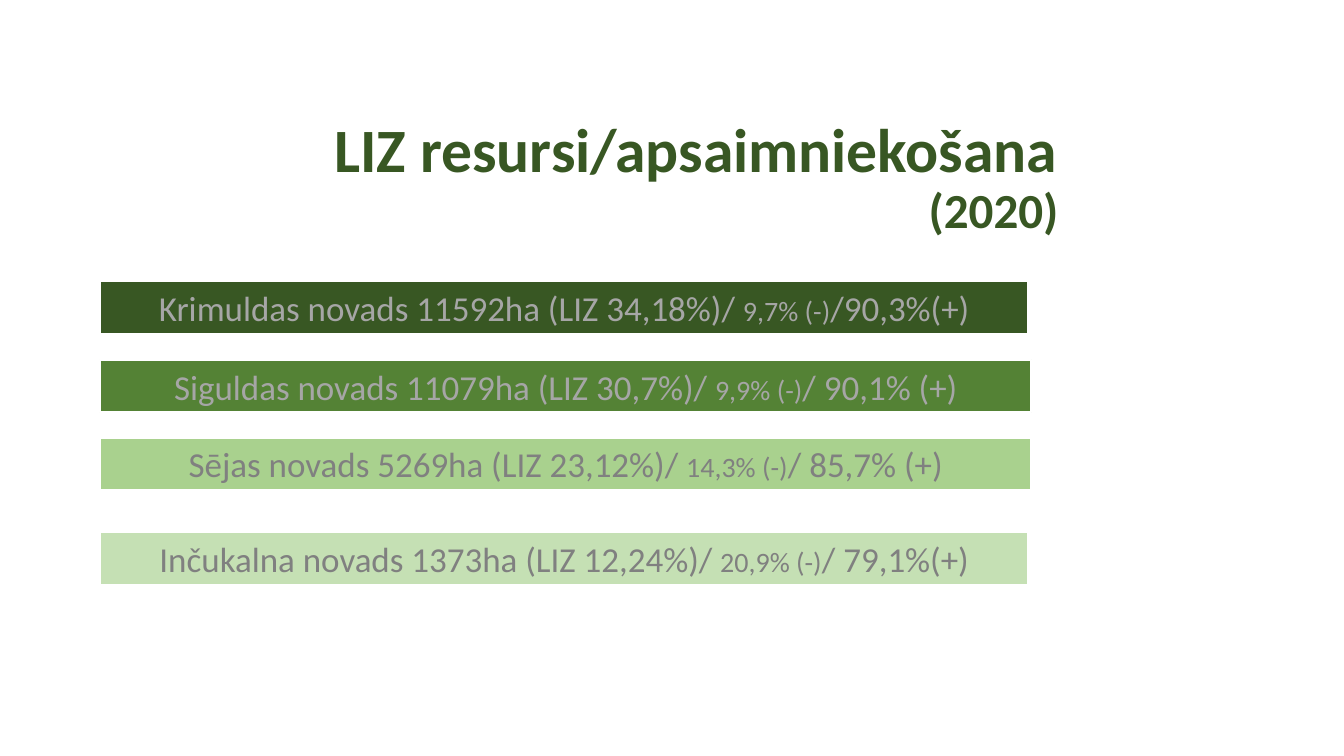
"""Build the slide on farmland resources and their use by municipality."""
from pptx import Presentation
from pptx.dml.color import RGBColor
from pptx.enum.shapes import MSO_SHAPE
from pptx.enum.text import MSO_ANCHOR, MSO_AUTO_SIZE, PP_ALIGN
from pptx.util import Inches, Pt

COLORS = {
    "dark": "385723",
    "green": "548235",
    "light": "A9D18E",
    "pale": "C5E0B4",
    "gray": "808080",
    "silver": "A6A6A6",
    "white": "FFFFFF",
}


def add_run(p, text, size, color, bold=False):
    r = p.add_run()
    r.text = text
    r.font.name = "Calibri"
    r.font.size = Pt(size)
    r.font.bold = bold
    r.font.color.rgb = RGBColor.from_string(COLORS[color])


prs = Presentation()
prs.slide_width = Inches(13.33)
prs.slide_height = Inches(7.5)
s = prs.slides.add_slide(prs.slide_layouts[5])

title = s.shapes.title
title.left, title.top = Inches(2.78), Inches(1.58)
title.width, title.height = Inches(7.72), Inches(0.79)
tf = title.text_frame
tf.word_wrap = True
tf.auto_size = MSO_AUTO_SIZE.NONE
tf.vertical_anchor = MSO_ANCHOR.BOTTOM
tf.margin_left = tf.margin_right = tf.margin_top = tf.margin_bottom = 0
p = tf.paragraphs[0]
p.alignment = PP_ALIGN.RIGHT
p.line_spacing = 0.9
add_run(p, "LIZ resursi/apsaimniekošana ", 44, "dark", True)
add_run(p, "(2020)", 35, "dark", True)

bars = [
    (2.79, 9.21, "dark", "silver",
     "Krimuldas novads 11592ha (LIZ 34,18%)/ ", "9,7% (-)", "/90,3%(+)"),
    (3.57, 9.24, "green", "silver",
     "Siguldas novads 11079ha (LIZ 30,7%)/ ", "9,9% (-)", "/ 90,1% (+)"),
    (4.34, 9.24, "light", "gray",
     "Sējas novads 5269ha (LIZ 23,12%)/ ", "14,3% (-)", "/ 85,7% (+)"),
    (5.28, 9.21, "pale", "gray",
     "Inčukalna novads 1373ha (LIZ 12,24%)/ ", "20,9% (-)", "/ 79,1%(+)"),
]
for top, width, fill, color, area, decrease, increase in bars:
    sp = s.shapes.add_shape(MSO_SHAPE.RECTANGLE, Inches(0.99), Inches(top),
                            Inches(width), Inches(0.52))
    sp.shadow.inherit = False
    sp.fill.solid()
    sp.fill.fore_color.rgb = RGBColor.from_string(COLORS[fill])
    sp.line.color.rgb = RGBColor.from_string(COLORS["white"])
    sp.line.width = Pt(1.5)
    tf = sp.text_frame
    tf.word_wrap = True
    tf.auto_size = MSO_AUTO_SIZE.SHAPE_TO_FIT_TEXT
    tf.vertical_anchor = MSO_ANCHOR.MIDDLE
    p = tf.paragraphs[0]
    p.alignment = PP_ALIGN.CENTER
    for text, size in ((area, 25), (decrease, 20), (increase, 25)):
        add_run(p, text, size, color)

prs.save("out.pptx")
